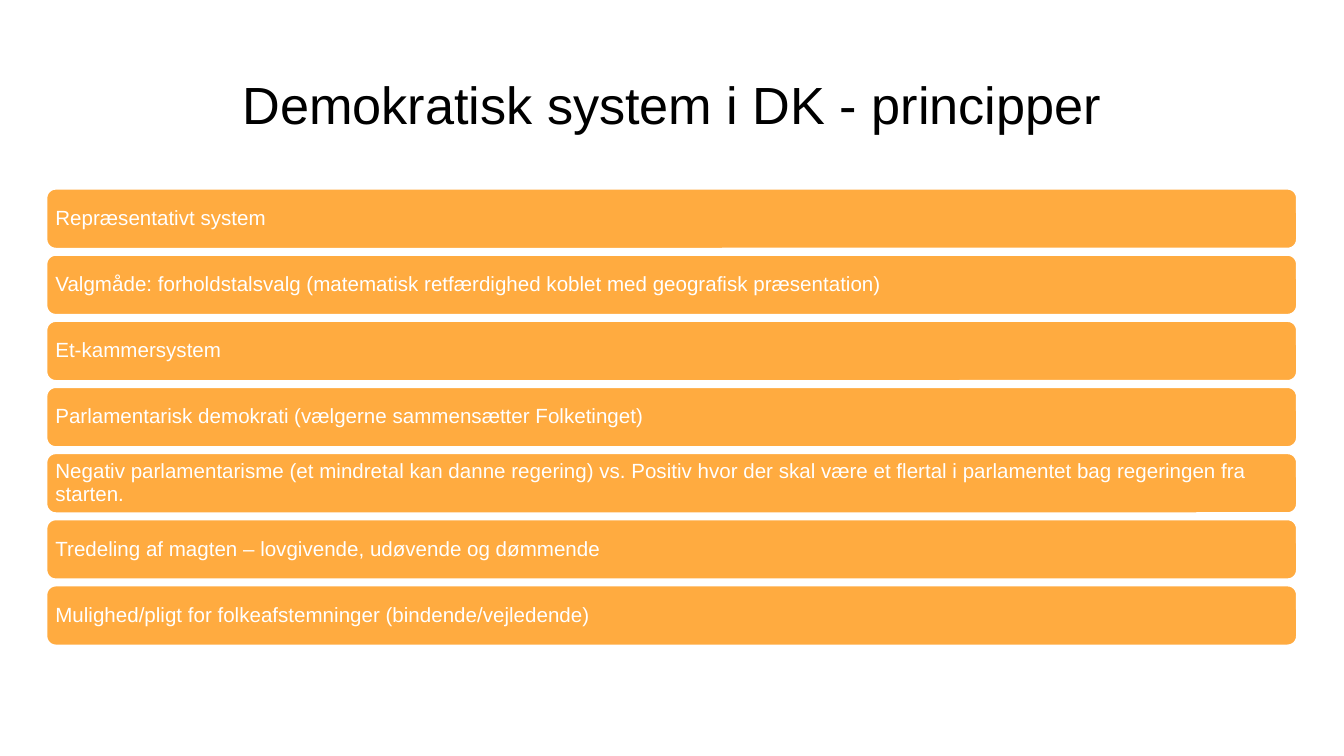
from dataclasses import dataclass

from pptx import Presentation
from pptx.dml.color import RGBColor
from pptx.enum.shapes import MSO_SHAPE as Shape
from pptx.enum.text import MSO_ANCHOR as Anchor, MSO_AUTO_SIZE as Fit, PP_ALIGN as Align
from pptx.slide import Slide
from pptx.text.text import TextFrame
from pptx.util import Cm, Pt

WHITE, BLACK, AMBER = "FFFFFF", "000000", "FFAB40"
LEFT, WIDTH = 0.86, 23.67
TOP, HEIGHT, PITCH = 3.55, 1.17, 1.25


@dataclass
class Bar:
    text: str
    top: float


LINES = [
    "Repræsentativt system",
    "Valgmåde: forholdstalsvalg (matematisk retfærdighed koblet med geografisk præsentation)",
    "Et-kammersystem",
    "Parlamentarisk demokrati (vælgerne sammensætter Folketinget)",
    "Negativ parlamentarisme (et mindretal kan danne regering) vs. Positiv hvor der "
    "skal være et flertal i parlamentet bag regeringen fra starten.",
    "Tredeling af magten – lovgivende, udøvende og dømmende",
    "Mulighed/pligt for folkeafstemninger (bindende/vejledende)",
]
BARS = [Bar(text, TOP + i * PITCH) for i, text in enumerate(LINES)]


def color(code: str) -> RGBColor:
    return RGBColor.from_string(code)


def write(frame: TextFrame, text: str, *, size: float, ink: str,
          align: Align = Align.LEFT, inset: float = 0.13) -> None:
    frame.word_wrap = True
    frame.auto_size = Fit.NONE
    frame.vertical_anchor = Anchor.MIDDLE
    frame.margin_left = frame.margin_right = Cm(inset)
    frame.margin_top = frame.margin_bottom = Cm(inset)
    par = frame.paragraphs[0]
    par.alignment = align
    par.line_spacing = 0.9
    par.space_before = Pt(0)
    run = par.add_run()
    run.text = text
    run.font.name = "Arial"
    run.font.size = Pt(size)
    run.font.color.rgb = color(ink)


def draw_title(slide: Slide, text: str) -> None:
    title = slide.shapes.title
    title.left, title.top = Cm(LEFT), Cm(1.24)
    title.width, title.height = Cm(WIDTH), Cm(1.6)
    write(title.text_frame, text, size=28, ink=BLACK, align=Align.CENTER, inset=0.25)


def draw_bar(slide: Slide, bar: Bar) -> None:
    box = slide.shapes.add_shape(
        Shape.ROUNDED_RECTANGLE, Cm(LEFT), Cm(bar.top), Cm(WIDTH), Cm(HEIGHT))
    box.shadow.inherit = False
    box.fill.solid()
    box.fill.fore_color.rgb = color(AMBER)
    box.line.color.rgb = color(WHITE)
    box.line.width = Pt(2)
    write(box.text_frame, bar.text, size=11, ink=WHITE)


def main() -> None:
    deck = Presentation()
    deck.slide_width, deck.slide_height = Cm(25.4), Cm(14.29)
    # Title-only layout
    slide = deck.slides.add_slide(deck.slide_layouts[5])
    draw_title(slide, "Demokratisk system i DK - principper")
    # Stack of principles
    for bar in BARS:
        draw_bar(slide, bar)
    deck.save("out.pptx")


if __name__ == "__main__":
    main()
